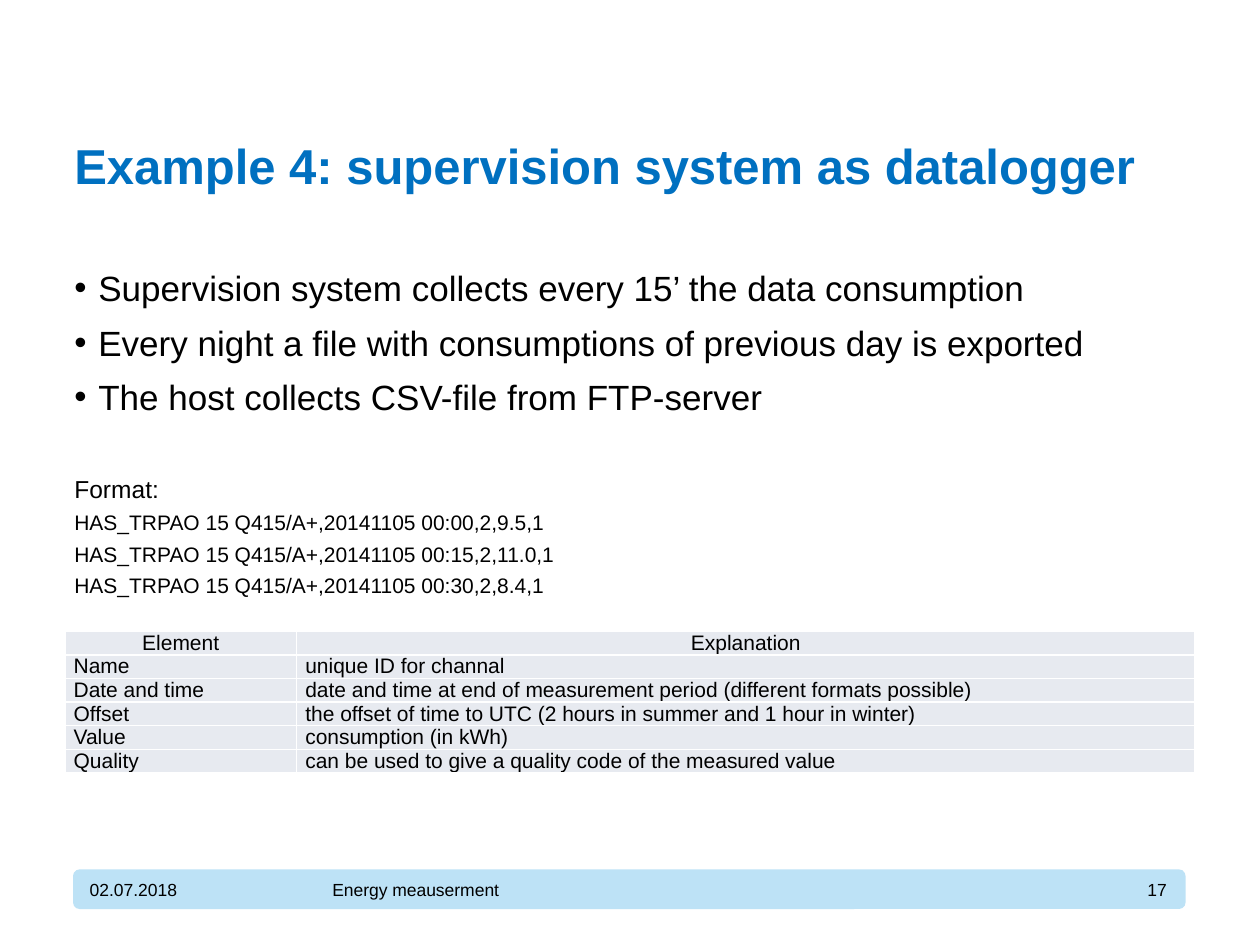
from lxml.etree import SubElement
from pptx import Presentation
from pptx.dml.color import RGBColor
from pptx.enum.shapes import MSO_SHAPE as Shape
from pptx.enum.text import MSO_ANCHOR as Anchor, MSO_AUTO_SIZE as AutoSize, PP_ALIGN as Align
from pptx.oxml.ns import qn
from pptx.util import Inches, Pt

COLORS = {"title": "0070C0", "text": "000000", "bar": "BDE2F6", "cell": "E7EAF0", "border": "FFFFFF"}
FONT = "Arial"
BULLETS = [
    "Supervision system collects every 15’ the data consumption",
    "Every night a file with consumptions of previous day is exported",
    "The host collects CSV-file from FTP-server",
]
SAMPLES = [
    "HAS_TRPAO 15 Q415/A+,20141105 00:00,2,9.5,1",
    "HAS_TRPAO 15 Q415/A+,20141105 00:15,2,11.0,1",
    "HAS_TRPAO 15 Q415/A+,20141105 00:30,2,8.4,1",
]
ROWS = [
    ("Element", "Explanation"),
    ("Name", "unique ID for channal"),
    ("Date and time", "date and time at end of measurement period (different formats possible)"),
    ("Offset", "the offset of time to UTC (2 hours in summer and 1 hour in winter)"),
    ("Value", "consumption (in kWh)"),
    ("Quality", "can be used to give a quality code of the measured value"),
]


def rgb(name):
    return RGBColor.from_string(COLORS[name])


def share(box, x, y, w, h):
    left, top, width, height = box
    return (int(left + width * x / 100), int(top + height * y / 100),
            int(width * w / 100), int(height * h / 100))


def place(sp, box):
    sp.left, sp.top, sp.width, sp.height = box


def frame(sp, anchor):
    tf = sp.text_frame
    tf.margin_left = tf.margin_right = tf.margin_top = tf.margin_bottom = 0
    tf.word_wrap = True
    tf.auto_size = AutoSize.NONE
    tf.vertical_anchor = anchor
    return tf


def write(p, text, size, align=Align.LEFT, color="text", bold=False):
    p.text = text
    p.alignment = align
    for r in p.runs:
        r.font.name = FONT
        r.font.size = Pt(size)
        r.font.bold = bold
        r.font.color.rgb = rgb(color)


def set_bullet(p, shown):
    pPr = p._p.get_or_add_pPr()
    indent = Inches(0.19) if shown else 0
    pPr.set("marL", str(indent))
    pPr.set("indent", str(-indent))
    if shown:
        SubElement(pPr, qn("a:buFont")).set("typeface", FONT)
        SubElement(pPr, qn("a:buChar")).set("char", "•")
    else:
        SubElement(pPr, qn("a:buNone"))


def add_title(s, box):
    sp = s.shapes.title
    place(sp, box)
    tf = frame(sp, Anchor.TOP)
    write(tf.paragraphs[0], "Example 4: supervision system as datalogger", 28, color="title", bold=True)


def add_body(s, box):
    sp = s.placeholders[1]
    place(sp, box)
    tf = frame(sp, Anchor.TOP)
    lines = [(t, 20, 0, 6, True) for t in BULLETS]
    lines += [("Format:", 14, 25, 3, False)]
    lines += [(t, 12, 0, 3, False) for t in SAMPLES]
    for i, (text, size, before, after, bullet) in enumerate(lines):
        p = tf.add_paragraph() if i else tf.paragraphs[0]
        set_bullet(p, bullet)
        p.line_spacing = 1.05
        p.space_before = Pt(before)
        p.space_after = Pt(after)
        write(p, text, size)


def set_borders(cell):
    tcPr = cell._tc.get_or_add_tcPr()
    for i, side in enumerate(("lnL", "lnR", "lnT", "lnB")):
        ln = tcPr.makeelement(qn(f"a:{side}"), {"w": str(Pt(1))})
        fill = SubElement(ln, qn("a:solidFill"))
        SubElement(fill, qn("a:srgbClr")).set("val", COLORS["border"])
        tcPr.insert(i, ln)


def add_elements(s, box):
    table = s.shapes.add_table(len(ROWS), 2, *box).table
    for col, part in zip(table.columns, (20.5, 79.5)):
        col.width = int(box[2] * part / 100)
    for i, row in enumerate(ROWS):
        table.rows[i].height = box[3] // len(ROWS)
        for j, text in enumerate(row):
            cell = table.cell(i, j)
            cell.margin_left = cell.margin_right = Inches(0.07)
            cell.margin_top = cell.margin_bottom = 0
            cell.fill.solid()
            cell.fill.fore_color.rgb = rgb("cell")
            set_borders(cell)
            write(cell.text_frame.paragraphs[0], text, 12, Align.LEFT if i else Align.CENTER)


def add_footer(s, box):
    bar = s.shapes.add_shape(Shape.ROUNDED_RECTANGLE, *box)
    bar.shadow.inherit = False
    bar.fill.solid()
    bar.fill.fore_color.rgb = rgb("bar")
    bar.line.fill.background()
    parts = [
        ("02.07.2018", 1.5, 20, Align.LEFT),
        ("Energy meauserment", 23.3, 53.8, Align.LEFT),
        ("17", 92.9, 5.4, Align.RIGHT),
    ]
    for text, x, w, align in parts:
        sp = s.shapes.add_textbox(*share(box, x, 5, w, 90))
        write(frame(sp, Anchor.MIDDLE).paragraphs[0], text, 10, align)


def main():
    prs = Presentation()
    prs.slide_width, prs.slide_height = Inches(10), Inches(7.5)
    page = (0, 0, prs.slide_width, prs.slide_height)
    s = prs.slides.add_slide(prs.slide_layouts[1])
    add_footer(s, share(page, 5.8, 92, 88.3, 4.2))
    add_title(s, share(page, 5.9, 14.3, 88.2, 12.9))
    add_body(s, share(page, 5.9, 28, 88.2, 61))
    add_elements(s, share(page, 5.15, 66.8, 89.7, 15))
    prs.save("out.pptx")


if __name__ == "__main__":
    main()
